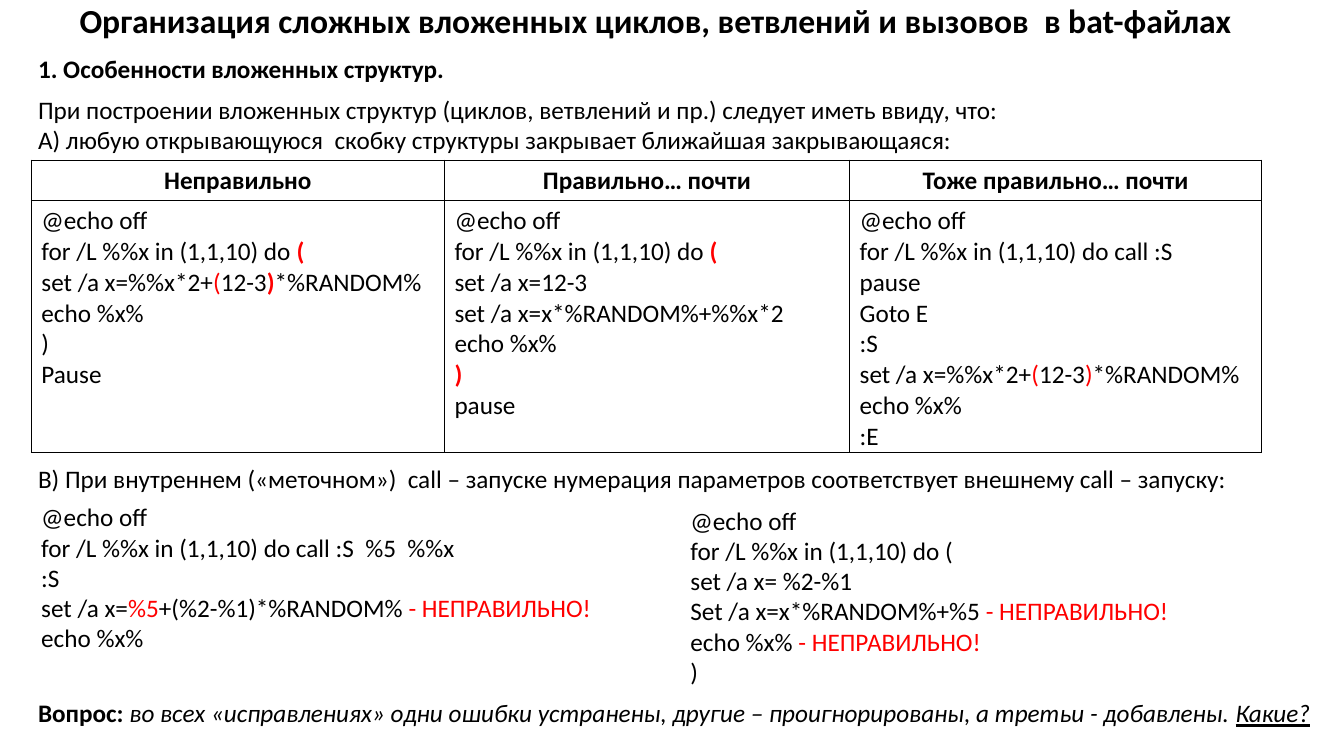
from dataclasses import dataclass

from lxml import etree
from pptx import Presentation
from pptx.dml.color import RGBColor
from pptx.enum.text import MSO_ANCHOR, MSO_AUTO_SIZE, PP_ALIGN
from pptx.oxml.ns import qn
from pptx.util import Cm, Pt

TOP = MSO_ANCHOR.TOP
GROW = MSO_AUTO_SIZE.SHAPE_TO_FIT_TEXT
LEFT, MID = PP_ALIGN.LEFT, PP_ALIGN.CENTER


@dataclass(frozen=True)
class Theme:
    font: str = "Calibri"
    ink: str = "000000"
    red: str = "FF0000"
    head: int = 24
    body: int = 18
    rule: int = 1


class Page:
    """Holds the theme and the current slide."""

    def __init__(self, deck, theme):
        self.theme = theme
        self.slide = deck.slides.add_slide(deck.slide_layouts[5])

    def fill(self, frame, lines, size, align=LEFT):
        for i, line in enumerate(lines):
            para = frame.add_paragraph() if i else frame.paragraphs[0]
            para.alignment = align
            for text, look in [(line, "")] if isinstance(line, str) else line:
                run = para.add_run()
                run.text = text
                font = run.font
                font.name, font.size = self.theme.font, Pt(size)
                font.bold, font.italic = "b" in look, "i" in look
                font.underline = "u" in look
                color = self.theme.red if "r" in look else self.theme.ink
                font.color.rgb = RGBColor.from_string(color)

    def fit(self, shape, lines, size, wrap):
        frame = shape.text_frame
        frame.word_wrap, frame.auto_size = wrap, GROW
        frame.vertical_anchor = TOP
        self.fill(frame, lines, size)

    def title(self, text, x, y, w, h):
        shape = self.slide.shapes.title
        shape.left, shape.top, shape.width, shape.height = map(Cm, (x, y, w, h))
        self.fit(shape, [[(text, "b")]], self.theme.head, False)

    def text(self, lines, x, y, w, h, wrap=True):
        shape = self.slide.shapes.add_textbox(*map(Cm, (x, y, w, h)))
        self.fit(shape, lines, self.theme.body, wrap)

    def frame(self, cell):
        props = cell._tc.get_or_add_tcPr()
        for side in ("a:lnL", "a:lnR", "a:lnT", "a:lnB"):
            line = etree.SubElement(props, qn(side), w=str(Pt(self.theme.rule)))
            fill = etree.SubElement(line, qn("a:solidFill"))
            etree.SubElement(fill, qn("a:srgbClr"), val=self.theme.ink)
        cell.fill.background()

    def table(self, heads, codes, x, y, cols, rows):
        area = map(Cm, (x, y, sum(cols), sum(rows)))
        table = self.slide.shapes.add_table(len(rows), len(cols), *area).table
        table.first_row = table.horz_banding = False
        for row, high in zip(table.rows, rows):
            row.height = Cm(high)
        for i, wide in enumerate(cols):
            table.columns[i].width = Cm(wide)
            cells = table.cell(0, i), table.cell(1, i)
            for cell in cells:
                self.frame(cell)
            size = self.theme.body
            self.fill(cells[0].text_frame, [[(heads[i], "b")]], size, MID)
            self.fill(cells[1].text_frame, codes[i], size)


def main():
    deck = Presentation()
    deck.slide_width, deck.slide_height = Cm(33.87), Cm(19.05)
    page = Page(deck, Theme())
    edge, code = 0.71, 0.79
    off, echo = "@echo off", "echo %x%"
    loop = "for /L %%x in (1,1,10) do "
    wrong = ("- НЕПРАВИЛЬНО!", "r")

    page.title(
        "Организация сложных вложенных циклов, ветвлений и вызовов  в bat-файлах",
        1.75, -0.13, 29.85, 1.28)
    page.text([[("1. Особенности вложенных структур.", "b")]],
              edge, 1.22, 10.82, 1.02, False)
    page.text([
        "При построении вложенных структур (циклов, ветвлений и пр.) следует иметь ввиду, что:",
        "А) любую открывающуюся  скобку структуры закрывает ближайшая закрывающаяся:",
    ], edge, 2.24, 25, 1.8, False)

    def total(close):
        return [("set /a x=%%x*2+", ""), ("(", "r"), ("12-3", ""),
                (")", close), ("*%RANDOM%", "")]

    block = [(loop, ""), ("(", "rb")]
    page.table(
        ["Неправильно", "Правильно… почти", "Тоже правильно… почти"],
        [
            [off, block, total("rb"), echo, ")", "Pause"],
            [off, block, "set /a x=12-3", "set /a x=x*%RANDOM%+%%x*2", echo,
             [(")", "rb")], "pause"],
            [off, loop + "call :S", "pause", "Goto E", ":S", total("r"), echo, ":E"],
        ],
        code, 4.04, [10.41, 10.21, 10.39], [1.02, 6.35])

    page.text([
        "B) При внутреннем («меточном»)  call – запуске нумерация параметров соответствует внешнему call – запуску:",
    ], edge, 11.56, 31.9, 1.02)
    page.text([
        off, loop + "call :S  %5  %%x", ":S",
        [("set /a x=", ""), ("%5", "r"), ("+(%2-%1)*%RANDOM% ", ""), wrong],
        echo,
    ], code, 12.52, 14.53, 4.11)
    page.text([
        off, loop + "(", "set /a x= %2-%1",
        [("Set /a x=x*%RANDOM%+%5 ", ""), wrong],
        [(echo + " ", ""), wrong],
        ")",
    ], 17.15, 12.6, 14.66, 4.88)
    page.text([[
        ("Вопрос: ", "b"),
        ("во всех «исправлениях» одни ошибки устранены, другие – проигнорированы, а третьи - добавлены. ", "i"),
        ("Какие?", "iu"),
    ]], edge, 17.45, 33.15, 1.02)
    deck.save("out.pptx")


if __name__ == "__main__":
    main()
